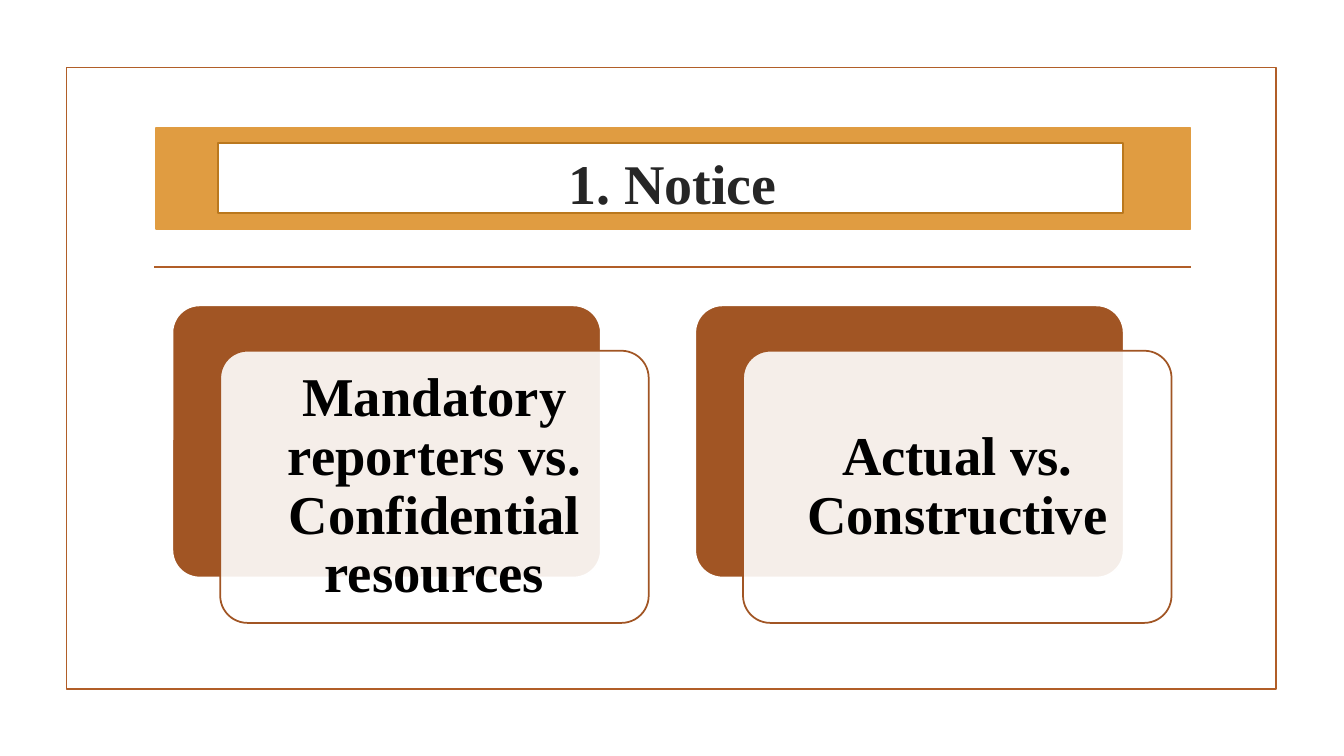
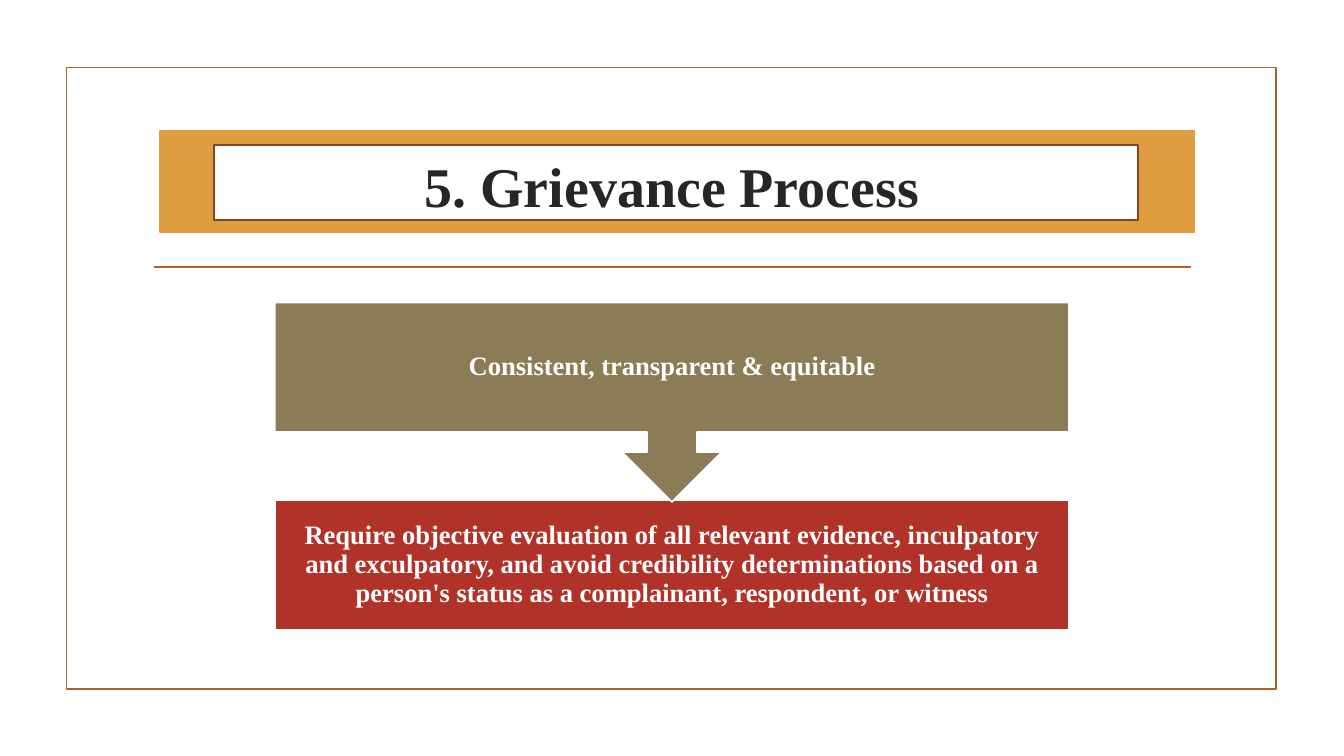
from lxml import etree
from pptx import Presentation
from pptx.dml.color import RGBColor
from pptx.enum.shapes import MSO_CONNECTOR as CONNECTOR, MSO_SHAPE as SHAPE
from pptx.enum.text import MSO_ANCHOR as ANCHOR, PP_ALIGN as ALIGN
from pptx.oxml.ns import qn
from pptx.util import Inches, Pt

COLORS = {
    "white": "FFFFFF", "black": "000000", "ink": "262626",
    "frame": "B15E28", "band": "E09C41", "card": "A15524",
    "olive": "8B7B56", "red": "B13228",
    "gold edge": "BA781E", "brown edge": "83461E",
}
FONT = "Times New Roman"
LINE_WIDTH = Pt(1.25)

deck = Presentation()
deck.slide_width, deck.slide_height = Inches(13.33), Inches(7.5)
column, row = deck.slide_width / 100, deck.slide_height / 100


def draw(slide, area, fill=None, line="white", kind=SHAPE.RECTANGLE):
    """Add a flat shape; area is left, top, width, height in percent of the slide."""
    left, top, width, height = area
    shape = slide.shapes.add_shape(kind, int(left * column), int(top * row),
                                   int(width * column), int(height * row))
    shape.shadow.inherit = False
    if fill:
        shape.fill.solid()
        shape.fill.fore_color.rgb = RGBColor.from_string(COLORS[fill])
    else:
        shape.fill.background()
    shape.line.color.rgb = RGBColor.from_string(COLORS[line])
    shape.line.width = LINE_WIDTH
    return shape


def write(shape, text, size=19, color="white", spacing=0.9, inset=0.15):
    frame = shape.text_frame
    frame.word_wrap = True
    frame.vertical_anchor = ANCHOR.MIDDLE
    frame.margin_left = frame.margin_right = Inches(inset)
    frame.margin_top = frame.margin_bottom = Inches(inset)
    paragraph = frame.paragraphs[0]
    paragraph.alignment = ALIGN.CENTER
    paragraph.line_spacing = spacing
    run = paragraph.add_run()
    run.text = text
    run.font.name, run.font.size, run.font.bold = FONT, Pt(size), True
    run.font.color.rgb = RGBColor.from_string(COLORS[color])


# Frame, rule, band and title on every slide
headers = [
    ("1. Notice", (11.63, 16.93), (16.2, 18.93, 67.35, 9.2), "gold edge",
     (10.65, 14.6, 78.75, 19.07)),
    ("5. Grievance Process", (11.93, 17.33), (15.9, 19.2, 68.78, 9.87), "brown edge",
     (26.03, 19.15, 47.93, 10.8)),
]
slides = []
for title, band_corner, plate, plate_edge, title_area in headers:
    slide = deck.slides.add_slide(deck.slide_layouts[6])
    slides.append(slide)
    draw(slide, (4.95, 8.93, 90, 82.27), line="frame")
    rule_y = int(35.33 * row)
    rule = slide.shapes.add_connector(CONNECTOR.STRAIGHT, int(11.48 * column), rule_y,
                                      int(88.6 * column), rule_y)
    rule.line.color.rgb = RGBColor.from_string(COLORS["frame"])
    rule.line.width = LINE_WIDTH
    etree.SubElement(rule.line._get_or_add_ln().getparent(), qn("a:effectLst"))

    draw(slide, (*band_corner, 76.95, 13.33), fill="band", line="band")
    draw(slide, plate, fill="white", line=plate_edge)
    left, top, width, height = title_area
    heading = slide.shapes.add_textbox(int(left * column), int(top * row),
                                       int(width * column), int(height * row))
    write(heading, title, size=40, color="ink", spacing=1.0, inset=0.05)

notice, grievance = slides

# Notice: two cards, each with a translucent front panel
card_left, card_top, card_width, card_height = 12.83, 40.4, 31.88, 36
card_pitch, shift_x, shift_y = 38.9, 3.56, 6
topics = ["Mandatory reporters vs. Confidential resources", "Actual vs. Constructive"]
for index, topic in enumerate(topics):
    left = card_left + index * card_pitch
    back = draw(notice, (left, card_top, card_width, card_height),
                fill="card", kind=SHAPE.ROUNDED_RECTANGLE)
    front = draw(notice, (left + shift_x, card_top + shift_y, card_width, card_height),
                 fill="white", line="card", kind=SHAPE.ROUNDED_RECTANGLE)
    for panel in (back, front):
        panel.adjustments[0] = 0.1
    front_color = front.fill._xPr.find(qn("a:solidFill"))[0]
    etree.SubElement(front_color, qn("a:alpha"), val="90000")
    write(front, topic, size=39, color="black", inset=0.16)

# Grievance process: a callout pointing down to the requirement
step_left, step_width = 20.45, 59.1
requirement = draw(grievance, (step_left, 66.13, step_width, 17.2), fill="red")
write(requirement, "Require objective evaluation of all relevant evidence, inculpatory and "
      "exculpatory, and avoid credibility determinations based on a person's status as a "
      "complainant, respondent, or witness")
principle = draw(grievance, (step_left, 40, step_width, 26.4), fill="olive",
                 kind=SHAPE.DOWN_ARROW_CALLOUT)
write(principle, "Consistent, transparent & equitable")

deck.save("out.pptx")
